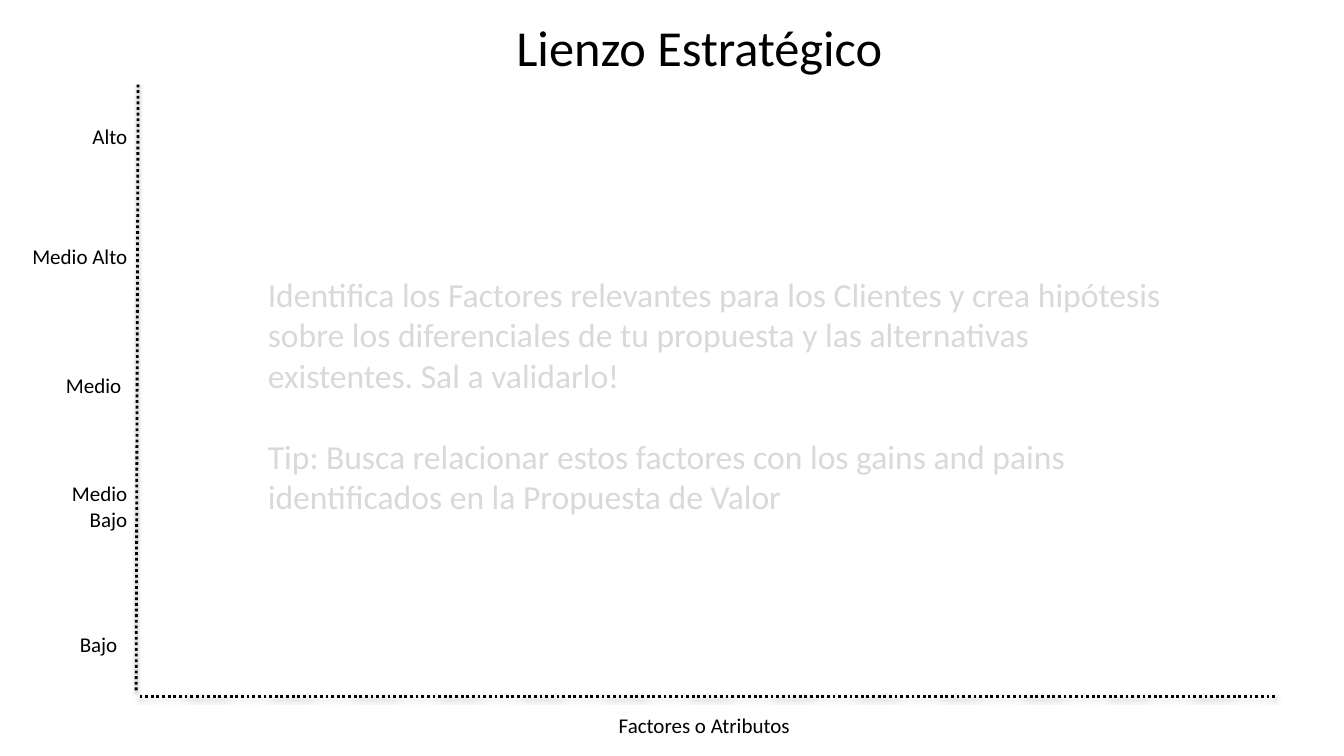
from lxml import etree
from pptx import Presentation
from pptx.dml.color import RGBColor
from pptx.enum.dml import MSO_LINE
from pptx.enum.shapes import MSO_CONNECTOR, MSO_SHAPE
from pptx.enum.text import MSO_ANCHOR, MSO_AUTO_SIZE, PP_ALIGN
from pptx.oxml import parse_xml
from pptx.oxml.ns import nsdecls
from pptx.util import Cm, Pt

STRAIGHT = MSO_CONNECTOR.STRAIGHT
ROUNDED = MSO_SHAPE.ROUNDED_RECTANGLE
DOTTED = MSO_LINE.ROUND_DOT
MIDDLE = MSO_ANCHOR.MIDDLE
LEFT, CENTER, RIGHT = PP_ALIGN.LEFT, PP_ALIGN.CENTER, PP_ALIGN.RIGHT
NO_AUTOFIT, GROW = MSO_AUTO_SIZE.NONE, MSO_AUTO_SIZE.SHAPE_TO_FIT_TEXT

FONT = "Calibri"
BLACK, GREY = "000000", "D9D9D9"
LABEL_WIDTH, LABEL_HEIGHT = 3.12, 1.27

# Level name, left and top in cm
LEVELS = [
    ("Alto", 0.43, 2.79),
    ("Medio Alto", 0.43, 5.82),
    ("Medio", 0.28, 9.07),
    ("Medio Bajo", 0.43, 12.12),
    ("Bajo", 0.18, 15.6),
]
HINTS = [
    "Identifica los Factores relevantes para los Clientes y crea hipótesis "
    "sobre los diferenciales de tu propuesta y las alternativas existentes. "
    "Sal a validarlo!",
    "Tip: Busca relacionar estos factores con los gains and pains "
    "identificados en la Propuesta de Valor",
]


def color(value):
    return RGBColor.from_string(value)


def format_paragraph(paragraph, size, font_color, alignment):
    paragraph.alignment = alignment
    for run in paragraph.runs:
        run.font.name = FONT
        run.font.size = Pt(size)
        run.font.color.rgb = color(font_color)


def fill_centred_frame(shape, text, size, alignment):
    frame = shape.text_frame
    frame.text = text
    frame.word_wrap = True
    frame.auto_size = NO_AUTOFIT
    frame.vertical_anchor = MIDDLE
    frame.margin_left = frame.margin_right = Cm(0.28)
    frame.margin_top = frame.margin_bottom = Cm(0.15)
    format_paragraph(frame.paragraphs[0], size, BLACK, alignment)


def add_title(slide, text):
    title = slide.shapes.title
    title.left, title.top = Cm(2.31), Cm(0.3)
    title.width, title.height = Cm(30.63), Cm(1.73)
    fill_centred_frame(title, text, 36, CENTER)


def add_label(slide, text, left, top, width, alignment):
    label = slide.shapes.add_shape(
        ROUNDED, Cm(left), Cm(top), Cm(width), Cm(LABEL_HEIGHT))
    label.shadow.inherit = False
    label.fill.background()
    label.line.fill.background()
    fill_centred_frame(label, text, 15, alignment)


def add_axis(slide, start_x, start_y, end_x, end_y):
    axis = slide.shapes.add_connector(
        STRAIGHT, Cm(start_x), Cm(start_y), Cm(end_x), Cm(end_y))
    axis.line.color.rgb = color(BLACK)
    axis.line.width = Pt(2)
    axis.line.dash_style = DOTTED
    # Soft shadow straight below the axis
    effects = parse_xml(f"<a:effectLst {nsdecls('a')}/>")
    shadow = etree.SubElement(
        effects, effects.tag.replace("effectLst", "outerShdw"),
        blurRad=str(Pt(3.1)), dist=str(Pt(1.6)), dir="5400000",
        rotWithShape="0")
    shadow.append(parse_xml(
        f'<a:srgbClr {nsdecls("a")} val="{BLACK}">'
        '<a:alpha val="38000"/></a:srgbClr>'))
    axis._element.spPr.append(effects)


def add_hints(slide, hints):
    box = slide.shapes.add_textbox(Cm(6.5), Cm(6.78), Cm(23.09), Cm(6.4))
    frame = box.text_frame
    frame.word_wrap = True
    frame.auto_size = GROW
    frame.text = "\n".join(hints)
    for paragraph in frame.paragraphs:
        format_paragraph(paragraph, 24, GREY, LEFT)
    # One line of space between the hints
    frame.paragraphs[1].space_before = Pt(29)


def main():
    presentation = Presentation()
    presentation.slide_width, presentation.slide_height = Cm(33.87), Cm(19.05)
    title_only = presentation.slide_layouts[5]
    slide = presentation.slides.add_slide(title_only)

    add_title(slide, "Lienzo Estratégico")

    # Axes of the canvas
    add_axis(slide, 32.13, 17.55, 3.48, 17.55)
    add_axis(slide, 3.48, 2.13, 3.43, 17.42)

    # Axis labels
    for name, left, top in LEVELS:
        add_label(slide, name, left, top, LABEL_WIDTH, RIGHT)
    add_label(slide, "Factores o Atributos", 12.24, 17.63, 11.02, CENTER)

    add_hints(slide, HINTS)
    presentation.save("out.pptx")


if __name__ == "__main__":
    main()
